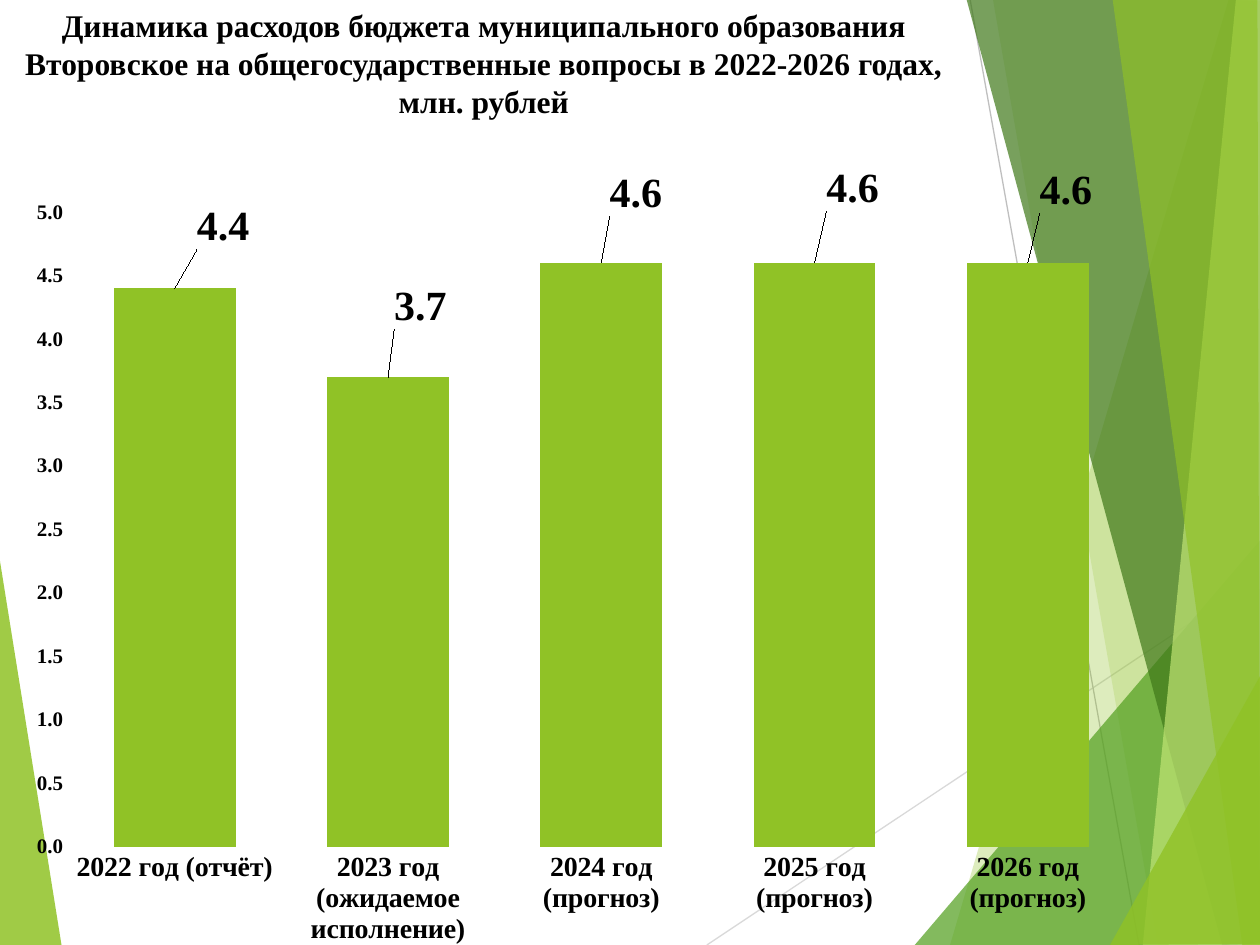
from lxml import etree
from pptx import Presentation
from pptx.chart.data import CategoryChartData
from pptx.dml.color import RGBColor
from pptx.enum.chart import XL_CHART_TYPE, XL_LABEL_POSITION, XL_TICK_MARK
from pptx.enum.shapes import MSO_CONNECTOR
from pptx.enum.text import MSO_ANCHOR, MSO_AUTO_SIZE, PP_ALIGN
from pptx.oxml.ns import qn
from pptx.util import Inches, Pt

COLUMN = XL_CHART_TYPE.COLUMN_CLUSTERED
OUTSIDE_END = XL_LABEL_POSITION.OUTSIDE_END
NO_TICK = XL_TICK_MARK.NONE
STRAIGHT = MSO_CONNECTOR.STRAIGHT
TOP = MSO_ANCHOR.TOP
NO_AUTOFIT = MSO_AUTO_SIZE.NONE
CENTER = PP_ALIGN.CENTER

FONT = "Times New Roman"
COLORS = {
    "lime": "90C226", "green": "54A021", "dark": "3F7819", "pale": "C0E474",
    "light_gray": "D9D9D9", "gray": "BFBFBF", "text": "000000",
}
TITLE = (
    "Динамика расходов бюджета муниципального образования Второвское "
    "на общегосударственные вопросы в 2022-2026 годах,\vмлн. рублей"
)
EXPENSES = [
    ("2022 год (отчёт)", 4.4, (0.042, -0.044)),
    ("2023 год (ожидаемое исполнение)", 3.7, (0.028, -0.055)),
    ("2024 год (прогноз)", 4.6, (0.03, -0.054)),
    ("2025 год (прогноз)", 4.6, (0.033, -0.06)),
    ("2026 год (прогноз)", 4.6, (0.033, -0.058)),
]
PLOT_AREA = {"x": 0.059, "y": 0.054, "w": 0.924, "h": 0.825}
LEFT_FACET = ("lime", 85, [(-0.01, 4.39), (0.49, 7.51), (-0.01, 7.5)])
RAYS = [
    ("light_gray", (5.61, 7.5), (10.01, 4.57)),
    ("gray", (7.7, 0), (9.04, 7.5)),
]
RIGHT_FACETS = [
    ("lime", 30, [(9.75, 0), (7.54, 7.5), (10.02, 7.51), (10.01, 0.01)]),
    ("lime", 20, [(7.88, -0.01), (9.19, 7.5), (10.01, 7.5), (10.01, -0.01)]),
    ("green", 72, [(7.26, 7.5), (10, 4.29), (10.01, 7.5)]),
    ("dark", 70, [(7.67, -0.01), (9.7, 7.5), (10.01, 7.49), (10.01, -0.01)]),
    ("pale", 70, [(9.81, -0.01), (9.07, 7.5), (10.01, 7.5), (10, -0.01)]),
    ("lime", 65, [(8.83, -0.01), (9.86, 7.5), (10, 7.5), (9.98, -0.01)]),
    ("lime", 80, [(8.81, 7.5), (10.01, 5.35), (10.01, 7.49)]),
]


def color(name):
    return RGBColor.from_string(COLORS[name])


def style_font(font, size, bold=True, name=FONT):
    font.name = name
    font.size = Pt(size)
    font.bold = bold
    font.color.rgb = color("text")


def add_facet(slide, fill, opacity, points):
    corners = [(Inches(x), Inches(y)) for x, y in points]
    builder = slide.shapes.build_freeform(*corners[0], scale=1.0)
    builder.add_line_segments(corners[1:], close=True)
    shape = builder.convert_to_shape()
    shape.shadow.inherit = False
    shape.fill.solid()
    shape.fill.fore_color.rgb = color(fill)
    shape.line.fill.background()
    fill_color = shape._element.spPr.find(qn("a:solidFill"))[0]
    etree.SubElement(fill_color, qn("a:alpha"), val=str(opacity * 1000))


def add_ray(slide, line_color, start, end):
    connector = slide.shapes.add_connector(STRAIGHT, *map(Inches, start + end))
    connector.line.color.rgb = color(line_color)
    connector.line.width = Pt(0.75)
    etree.SubElement(connector._element.spPr, qn("a:effectLst"))


def add_title(slide, text, size):
    title = slide.shapes.title
    title.left, title.top, title.width, title.height = map(Inches, (0, 0, 7.68, 1.21))
    frame = title.text_frame
    frame.word_wrap = True
    frame.auto_size = NO_AUTOFIT
    frame.vertical_anchor = TOP
    paragraph = frame.paragraphs[0]
    paragraph.text = text
    paragraph.alignment = CENTER
    for run in paragraph.runs:
        style_font(run.font, size)
    for line_break in paragraph._p.findall(qn("a:br")):
        etree.SubElement(line_break, qn("a:rPr"), sz=str(size * 100))
    slide.shapes._spTree.append(title._element)


def make_layout(values):
    layout = etree.Element(qn("c:layout"))
    manual = etree.SubElement(layout, qn("c:manualLayout"))
    for key, value in values.items():
        etree.SubElement(manual, qn(f"c:{key}"), val=str(value))
    return layout


def format_axis(axis, size):
    axis.major_tick_mark = axis.minor_tick_mark = NO_TICK
    axis.has_major_gridlines = False
    axis.format.line.fill.background()
    style_font(axis.tick_labels.font, size)


def add_expense_chart(slide):
    data = CategoryChartData(number_format="0.0")
    data.categories = [category for category, _, _ in EXPENSES]
    data.add_series("Series 1", [value for _, value, _ in EXPENSES])
    frame = slide.shapes.add_chart(COLUMN, *map(Inches, (0, 1.31, 9.16, 6.19)), data)
    chart = frame.chart
    chart.has_legend = chart.has_title = False
    style_font(chart.font, 10, bold=False, name="Roboto")

    format_axis(chart.category_axis, 16)
    value_axis = chart.value_axis
    format_axis(value_axis, 12)
    value_axis.minimum_scale, value_axis.maximum_scale = 0, 5
    value_axis.major_unit = 0.5
    value_axis.tick_labels.number_format = "0.0"
    value_axis.tick_labels.number_format_is_linked = False

    plot = chart.plots[0]
    plot.gap_width = 75
    plot.vary_by_categories = False
    series = plot.series[0]
    series.format.fill.solid()
    series.format.fill.fore_color.rgb = color("lime")
    labels = series.data_labels
    labels.show_value = True
    labels.number_format = "0.0"
    labels.number_format_is_linked = False
    style_font(labels.font, 24)
    for index, (_, _, (x, y)) in enumerate(EXPENSES):
        label = series.points[index].data_label
        style_font(label.font, 24)
        label.position = OUTSIDE_END
        element = labels._element.findall(qn("c:dLbl"))[index]
        element.insert(1, make_layout({"x": x, "y": y}))

    plot_area = chart._chartSpace.chart.plotArea
    for layout in plot_area.findall(qn("c:layout")):
        plot_area.remove(layout)
    modes = {"layoutTarget": "inner", "xMode": "edge", "yMode": "edge"}
    plot_area.insert(0, make_layout({**modes, **PLOT_AREA}))


def main():
    presentation = Presentation()
    presentation.slide_width, presentation.slide_height = Inches(10), Inches(7.5)
    slide = presentation.slides.add_slide(presentation.slide_layouts[5])
    add_facet(slide, *LEFT_FACET)
    for ray in RAYS:
        add_ray(slide, *ray)
    for facet in RIGHT_FACETS:
        add_facet(slide, *facet)
    add_title(slide, TITLE, 18)
    add_expense_chart(slide)
    presentation.save("out.pptx")


if __name__ == "__main__":
    main()
